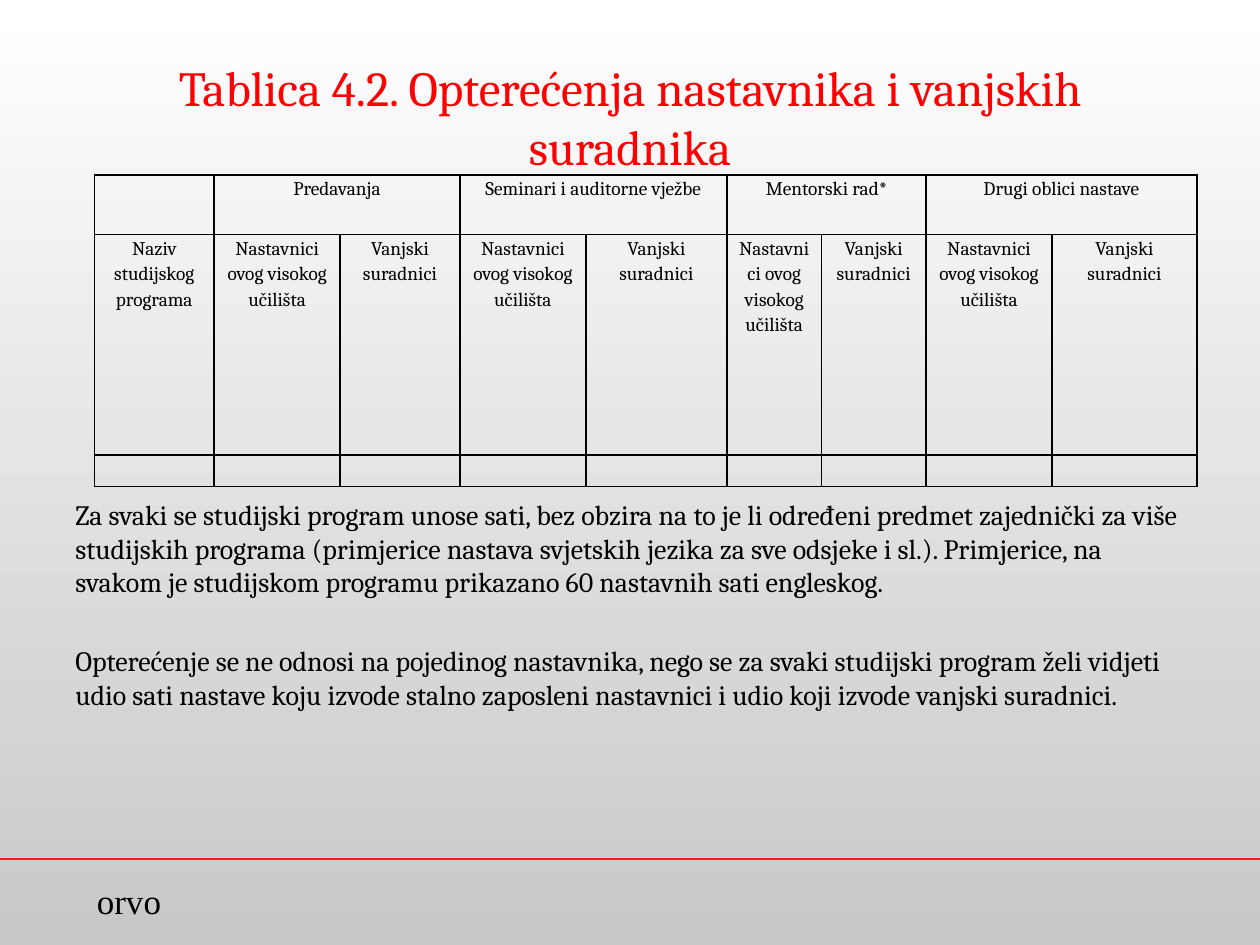
from lxml.etree import SubElement
from pptx import Presentation
from pptx.dml.color import RGBColor
from pptx.enum.shapes import MSO_CONNECTOR
from pptx.enum.text import MSO_ANCHOR, PP_ALIGN
from pptx.oxml import parse_xml
from pptx.oxml.ns import nsdecls, qn
from pptx.util import Inches, Pt

COLUMNS = [0.95, 1, 0.95, 1, 1.12, 0.75, 0.83, 1, 1.15]
ROWS = [0.47, 1.75, 0.25]
GROUPS = ["Predavanja", "Seminari i auditorne vježbe", "Mentorski rad*", "Drugi oblici nastave"]
STAFF = ["Nastavnici ovog visokog učilišta", "Vanjski suradnici"]
NOTES = [
    "Za svaki se studijski program unose sati, bez obzira na to je li određeni predmet "
    "zajednički za više studijskih programa (primjerice nastava svjetskih jezika za sve "
    "odsjeke i sl.). Primjerice, na svakom je studijskom programu prikazano 60 nastavnih "
    "sati engleskog.",
    "Opterećenje se ne odnosi na pojedinog nastavnika, nego se za svaki studijski program "
    "želi vidjeti udio sati nastave koju izvode stalno zaposleni nastavnici i udio koji "
    "izvode vanjski suradnici.",
]
CELL_FORMAT = {"alignment": PP_ALIGN.CENTER, "line_spacing": 1.15, "space_after": Pt(10)}
CELL_MARGINS = {"margin_left": Inches(0.07), "margin_right": Inches(0.07),
                "margin_top": 0, "margin_bottom": 0}


def color(value):
    """Turn a hex string into a colour."""
    return RGBColor.from_string(value)


def apply(target, values):
    """Set every attribute named in a dict."""
    for name, value in values.items():
        setattr(target, name, value)


def write(para, text, size, font="Cambria", fill="000000", **layout):
    """Put one formatted span into a paragraph."""
    span = para.add_run()
    span.text = text
    apply(span.font, {"name": font, "size": Pt(size)})
    span.font.color.rgb = color(fill)
    apply(para, layout)


def paint_background(page):
    """Fill the page with a gradient from top to bottom."""
    fill = page.background.fill
    fill.gradient()
    fill.gradient_angle = 270
    for stop, shade in zip(fill.gradient_stops, ["FFFFFF", "C8C8C8"]):
        stop.color.rgb = color(shade)


def add_title(page, text):
    """Place and format the title."""
    title = page.shapes.title
    apply(title, {"left": Inches(0.5), "top": Inches(0.3),
                  "width": Inches(9), "height": Inches(1.25)})
    title.text_frame.vertical_anchor = MSO_ANCHOR.MIDDLE
    write(title.text_frame.paragraphs[0], text, 28, fill="FF0000", alignment=PP_ALIGN.CENTER)


def add_text(page, left, top, width, height, texts, size, font="Cambria", gap=0):
    """Add a text box with one paragraph for each text."""
    box = page.shapes.add_textbox(Inches(left), Inches(top), Inches(width), Inches(height))
    frame = box.text_frame
    frame.word_wrap = True
    for index, text in enumerate(texts):
        para = frame.add_paragraph() if index else frame.paragraphs[0]
        write(para, text, size, font, space_before=Pt(gap if index else 0))


def add_rule(page, top):
    """Draw the red line across the page."""
    rule = page.shapes.add_connector(
        MSO_CONNECTOR.STRAIGHT, 0, Inches(top), Inches(10), Inches(top))
    rule.line.color.rgb = color("EE1C1B")
    rule.line.width = Pt(1)
    SubElement(rule._element.spPr, qn("a:effectLst"))


def format_cell(cell, text):
    """Fill in one cell and draw its borders."""
    apply(cell, CELL_MARGINS)
    cell.fill.background()
    para = cell.text_frame.paragraphs[0]
    if text:
        write(para, text, 11, **CELL_FORMAT)
    else:
        SubElement(para._p, qn("a:endParaRPr"), sz="1100")
    properties = cell._tc.get_or_add_tcPr()
    for index, side in enumerate(["lnL", "lnR", "lnT", "lnB"]):
        properties.insert(index, parse_xml(
            f'<a:{side} {nsdecls("a")} w="12700"><a:solidFill>'
            f'<a:srgbClr val="000000"/></a:solidFill></a:{side}>'))


def add_workload_table(page):
    """Add the table of teaching loads."""
    table = page.shapes.add_table(
        len(ROWS), len(COLUMNS), Inches(0.75), Inches(1.39),
        Inches(sum(COLUMNS)), Inches(sum(ROWS))).table
    apply(table, {"first_row": False, "horz_banding": False})
    for column, width in zip(table.columns, COLUMNS):
        column.width = Inches(width)
    for row, height in zip(table.rows, ROWS):
        row.height = Inches(height)
    top_row = [""]
    for group in GROUPS:
        top_row += [group, ""]
    texts = [top_row, ["Naziv studijskog programa"] + STAFF * len(GROUPS), [""] * len(COLUMNS)]
    for row, line in zip(table.rows, texts):
        for cell, text in zip(row.cells, line):
            format_cell(cell, text)
    for first in range(1, len(COLUMNS), 2):
        table.cell(0, first).merge(table.cell(0, first + 1))


def main():
    """Build the deck."""
    deck = Presentation()
    apply(deck, {"slide_width": Inches(10), "slide_height": Inches(7.5)})
    page = deck.slides.add_slide(deck.slide_layouts[5])
    paint_background(page)
    add_rule(page, 6.82)
    add_text(page, 0.67, 6.93, 0.87, 0.43, ["orvo"], 20, "Times New Roman")
    add_title(page, "Tablica 4.2. Opterećenja nastavnika i vanjskih suradnika")
    add_text(page, 0.5, 3.9, 9, 2.8, NOTES, 16, gap=26)
    add_workload_table(page)
    deck.save("out.pptx")


if __name__ == "__main__":
    main()
